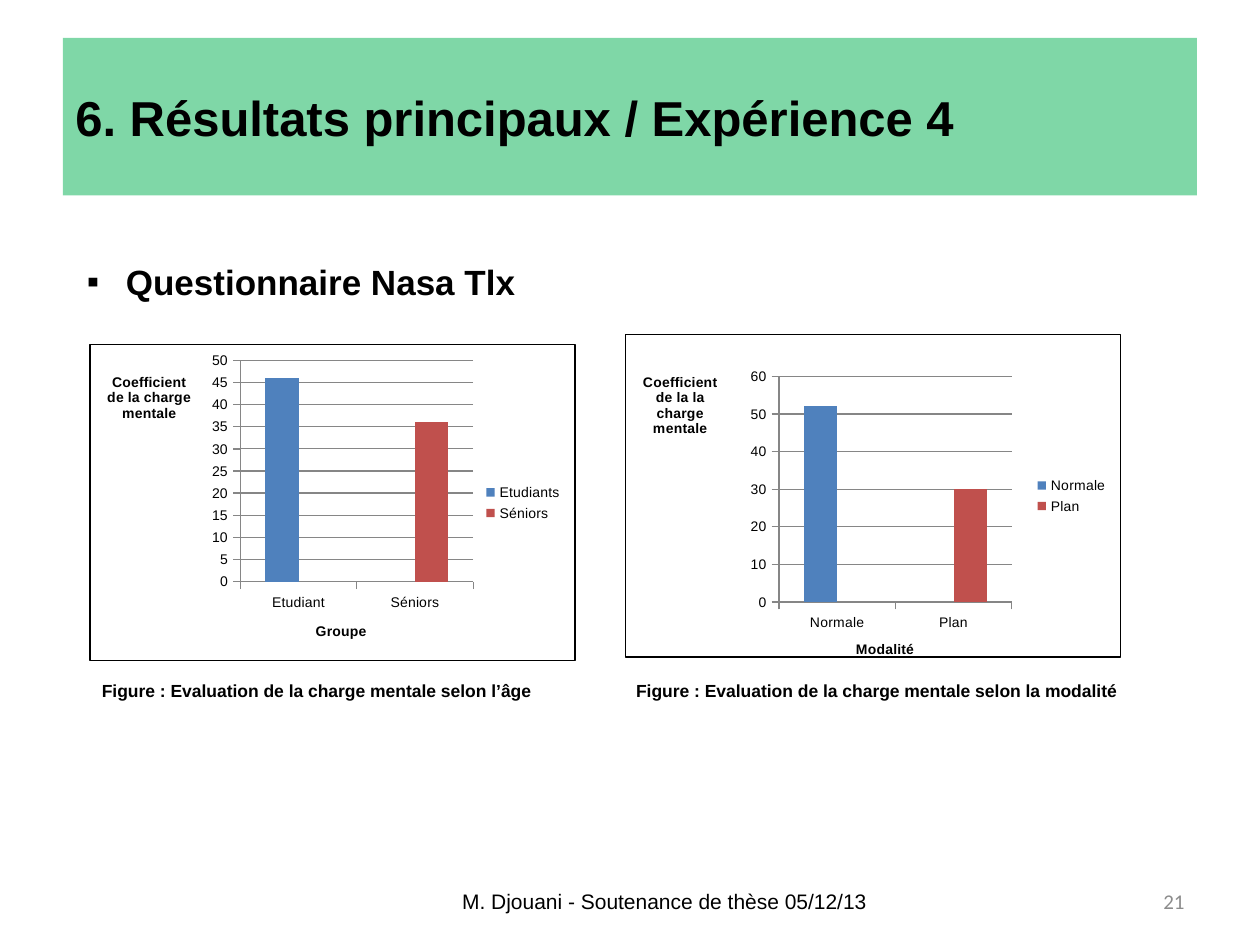
from lxml.etree import SubElement
from pptx import Presentation
from pptx.chart.data import CategoryChartData
from pptx.dml.color import RGBColor
from pptx.enum.chart import XL_CHART_TYPE, XL_LEGEND_POSITION, XL_TICK_MARK
from pptx.enum.shapes import MSO_SHAPE
from pptx.enum.text import MSO_ANCHOR, PP_ALIGN
from pptx.oxml import parse_xml
from pptx.oxml.ns import nsdecls, qn
from pptx.util import Inches, Pt

WIDE, HIGH = 10, 7.5
BLACK, GREY, BLUE, RED = "000000", "868686", "4F81BD", "C0504D"


def color(code):
    """Turn a hex string into a colour."""
    return RGBColor.from_string(code)


def box(left, top, width, height):
    """Turn inches into lengths."""
    return [Inches(n) for n in (left, top, width, height)]


def style(item, **form):
    """Set attributes from a dict of format values."""
    for name, value in form.items():
        setattr(item, name, value)


def write(shape, text, size, bold=False, face="Arial", ink=BLACK,
          align=PP_ALIGN.LEFT, anchor=MSO_ANCHOR.TOP):
    """Put one styled line of text in a shape."""
    frame = shape.text_frame
    style(frame, word_wrap=True, vertical_anchor=anchor)
    line = frame.paragraphs[0]
    line.alignment = align
    run = line.add_run()
    run.text = text
    style(run.font, size=Pt(size), bold=bold, name=face)
    run.font.color.rgb = color(ink)
    return line


def label(slide, place, text, size, **form):
    """Add a text box with one line."""
    return write(slide.shapes.add_textbox(*box(*place)), text, size, **form)


def banner(slide, place, text):
    """Add the half-clear green title band."""
    band = slide.shapes.add_shape(MSO_SHAPE.RECTANGLE, *box(*place))
    band.shadow.inherit = False
    band.line.fill.background()
    band.fill.solid()
    band.fill.fore_color.rgb = color("00B050")
    SubElement(next(band.fill._xPr.iter(qn("a:srgbClr"))), qn("a:alpha"), val="50000")
    write(band, text, 28, bold=True, anchor=MSO_ANCHOR.MIDDLE)


def bullet(line, sign, indent):
    """Give a line a hanging bullet."""
    props = line._p.get_or_add_pPr()
    props.set("marL", str(Inches(indent)))
    props.set("indent", str(-Inches(indent)))
    SubElement(props, qn("a:buFont"), typeface="Arial")
    SubElement(props, qn("a:buChar"), char=sign)


def layout(part, **shares):
    """Place a chart part by shares of the chart."""
    for old in part.findall(qn("c:layout")):
        part.remove(old)
    node = parse_xml(f"<c:layout {nsdecls('c')}/>")
    spot = SubElement(node, qn("c:manualLayout"))
    if "w" in shares:
        SubElement(spot, qn("c:layoutTarget"), val="inner")
    for key in ("xMode", "yMode"):
        SubElement(spot, qn("c:" + key), val="edge")
    for key, share in shares.items():
        SubElement(spot, qn("c:" + key), val=str(share))
    text = part.find(qn("c:tx"))
    if text is None:
        part.insert(0, node)
    else:
        text.addnext(node)


def scale(axis, text, spot, grid):
    """Style an axis and place its level title."""
    style(axis, has_major_gridlines=grid, major_tick_mark=XL_TICK_MARK.OUTSIDE,
          minor_tick_mark=XL_TICK_MARK.NONE)
    lines = [axis.format.line] + ([axis.major_gridlines.format.line] if grid else [])
    for line in lines:
        line.color.rgb = color(GREY)
        line.width = Pt(0.75)
    title = axis.axis_title
    title.text_frame.text = text
    font = title.text_frame.paragraphs[0].runs[0].font
    style(font, size=Pt(8), bold=True, name="Arial")
    font.color.rgb = color(BLACK)
    next(title._element.iter(qn("a:bodyPr"))).set("rot", "0")
    layout(title._element, x=spot[0], y=spot[1])


def graph(slide, place, cats, series, values, titles, spots, plot, top, step):
    """Add a framed column chart with one bar per group."""
    data = CategoryChartData()
    data.categories = cats
    for i, name in enumerate(series):
        data.add_series(name, [v if i == j else None for j, v in enumerate(values)])
    chart = slide.shapes.add_chart(XL_CHART_TYPE.COLUMN_CLUSTERED, *box(*place), data).chart
    style(chart, has_title=False, has_legend=True)
    style(chart.font, size=Pt(8), name="Arial")
    chart.font.color.rgb = color(BLACK)
    style(chart.legend, position=XL_LEGEND_POSITION.RIGHT, include_in_layout=False)
    bars = chart.plots[0]
    style(bars, gap_width=150, overlap=0, vary_by_categories=False)
    for bar, code in zip(bars.series, (BLUE, RED)):
        bar.format.fill.solid()
        bar.format.fill.fore_color.rgb = color(code)
    style(chart.value_axis, minimum_scale=0, maximum_scale=top, major_unit=step)
    scale(chart.category_axis, titles[0], spots[0], False)
    scale(chart.value_axis, titles[1], spots[1], True)
    root = chart._chartSpace.find(qn("c:chart"))
    layout(root.find(qn("c:plotArea")), **dict(zip("xywh", plot)))
    root.addnext(parse_xml(
        f'<c:spPr {nsdecls("c", "a")}><a:solidFill><a:srgbClr val="FFFFFF"/></a:solidFill>'
        f'<a:ln w="{Pt(0.75)}"><a:solidFill><a:srgbClr val="{BLACK}"/></a:solidFill></a:ln></c:spPr>'))


def main():
    """Build and save the slide."""
    deck = Presentation()
    style(deck, slide_width=Inches(WIDE), slide_height=Inches(HIGH))
    slide = deck.slides.add_slide(deck.slide_layouts[6])
    banner(slide, (0.05 * WIDE, 0.04 * HIGH, 0.9 * WIDE, HIGH / 6),
           "6. Résultats principaux / Expérience 4")
    bullet(label(slide, (0.59, 2.02, 4.09, 0.44), "Questionnaire Nasa Tlx", 20, bold=True),
           "▪", 0.31)
    graph(slide, (0.71, 2.73, 3.86, 2.52), ["Etudiant", "Séniors"], ["Etudiants", "Séniors"],
          (46, 36), ("Groupe", "Coefficient de la charge mentale"),
          ((0.46, 0.87), (0.03, 0.08)), (0.31, 0.05, 0.48, 0.7), 50, 5)
    graph(slide, (4.96, 2.65, 3.94, 2.6), ["Normale", "Plan"], ["Normale", "Plan"],
          (52, 30), ("Modalité", "Coefficient de la la charge mentale"),
          ((0.46, 0.94), (0.03, 0.11)), (0.31, 0.13, 0.47, 0.7), 60, 10)
    for left, width, end in ((0.71, 3.86, "l’âge"), (4.95, 4.25, "la modalité")):
        label(slide, (left, 5.35, width, 0.27),
              "Figure : Evaluation de la charge mentale selon " + end, 10, bold=True)
    foot = {"anchor": MSO_ANCHOR.MIDDLE}
    label(slide, (3.42, 6.95, 3.71, 0.4), "M. Djouani - Soutenance de thèse 05/12/13", 12,
          align=PP_ALIGN.CENTER, **foot)
    label(slide, (7.17, 6.95, 2.33, 0.4), "21", 12, face="Calibri", ink="8C8C8C",
          align=PP_ALIGN.RIGHT, **foot)
    deck.save("out.pptx")


if __name__ == "__main__":
    main()
